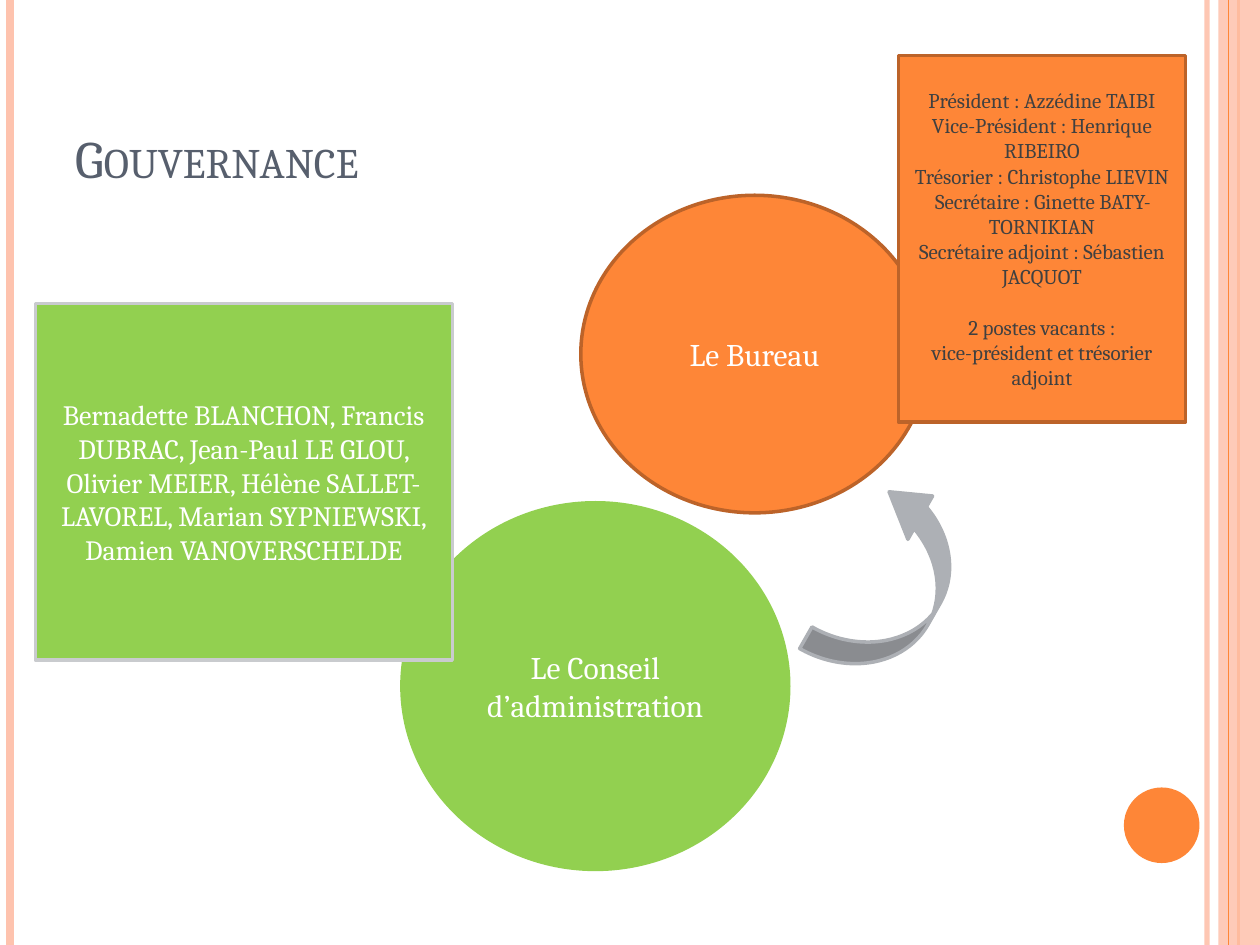
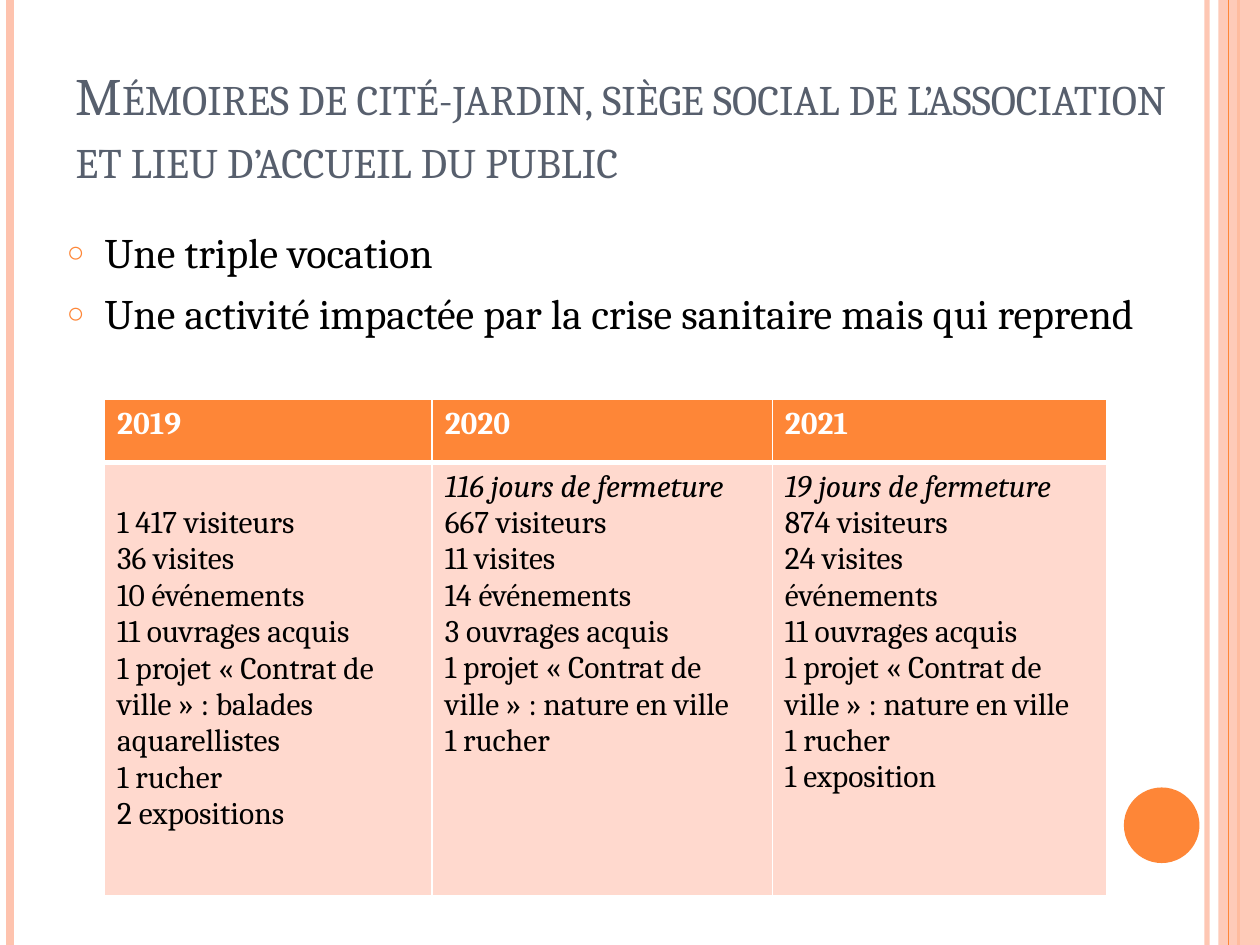
from lxml import etree
from pptx import Presentation
from pptx.dml.color import RGBColor
from pptx.enum.shapes import MSO_CONNECTOR, MSO_SHAPE
from pptx.enum.text import MSO_ANCHOR, MSO_AUTO_SIZE, PP_ALIGN
from pptx.oxml.ns import qn
from pptx.util import Inches, Pt

RECT, OVAL = MSO_SHAPE.RECTANGLE, MSO_SHAPE.OVAL
CURVED_ARROW = MSO_SHAPE.CURVED_DOWN_ARROW
STRAIGHT = MSO_CONNECTOR.STRAIGHT
CENTER, LEFT = PP_ALIGN.CENTER, PP_ALIGN.LEFT
MIDDLE, TOP, BOTTOM = MSO_ANCHOR.MIDDLE, MSO_ANCHOR.TOP, MSO_ANCHOR.BOTTOM
NO_FIT = MSO_AUTO_SIZE.NONE

FONT = "Cambria"
COLORS = {
    "orange": "FE8637", "dark_orange": "BC6329", "peach": "FEC3AE",
    "pale": "FFD9CE", "green": "92D050", "gray": "ADB0B5",
    "light_gray": "C9CBCE", "slate": "575F6D", "ink": "404040",
    "white": "FFFFFF", "black": "000000",
}


def rgb(name):
    return RGBColor.from_string(COLORS[name])


def set_alpha(element, percent):
    """Make the first solid colour inside element partly transparent."""
    color = element.find(".//" + qn("a:srgbClr"))
    etree.SubElement(color, qn("a:alpha")).set("val", str(percent * 1000))


class Deck:
    def __init__(self):
        self.prs = Presentation()
        self.prs.slide_width, self.prs.slide_height = Inches(10), Inches(7.5)
        self.slide = None

    def new_slide(self, layout, title, title_width):
        self.slide = self.prs.slides.add_slide(self.prs.slide_layouts[layout])
        self.side_bands()
        sp = self.slide.shapes.title
        self.place(sp, 0.5, 0.3, title_width, 1.25)
        tf = sp.text_frame
        tf.text = title
        tf.auto_size = NO_FIT
        tf.vertical_anchor = BOTTOM
        p = tf.paragraphs[0]
        p.alignment = LEFT
        self.format(p, 30, "slate")
        p.runs[0].font._element.set("cap", "small")

    def side_bands(self):
        self.vertical_line(9.58, "peach", 3, alpha=93)
        self.vertical_line(0.08, "peach", 4.5)
        self.vertical_line(9.83, "orange", 1.5)
        band = self.shape(RECT, 9.67, 0, 0.33, 7.5, "peach")
        set_alpha(band._element.spPr, 87)
        self.vertical_line(9.75, "orange", 0.75)
        self.shape(OVAL, 8.92, 6.25, 0.6, 0.6, "orange")

    def place(self, sp, left, top, width, height):
        sp.left, sp.top = Inches(left), Inches(top)
        sp.width, sp.height = Inches(width), Inches(height)

    def format(self, p, size, color, bold=False, italic=False):
        for r in p.runs:
            font = r.font
            font.name, font.size = FONT, Pt(size)
            font.bold, font.italic = bold, italic
            font.color.rgb = rgb(color)

    def vertical_line(self, x, color, width, alpha=None):
        line = self.slide.shapes.add_connector(
            STRAIGHT, Inches(x), 0, Inches(x), self.prs.slide_height)
        line.line.color.rgb = rgb(color)
        line.line.width = Pt(width)
        sp_pr = line._element.spPr
        etree.SubElement(sp_pr, qn("a:effectLst"))
        if alpha:
            set_alpha(sp_pr, alpha)

    def shape(self, kind, left, top, width, height, fill, outline=None):
        sp = self.slide.shapes.add_shape(
            kind, Inches(left), Inches(top), Inches(width), Inches(height))
        sp.shadow.inherit = False
        sp.fill.solid()
        sp.fill.fore_color.rgb = rgb(fill)
        if outline:
            sp.line.color.rgb = rgb(outline)
            sp.line.width = Pt(2)
        else:
            sp.line.fill.background()
        return sp

    def label(self, sp, text, size, color="white"):
        tf = sp.text_frame
        tf.text = text
        tf.word_wrap = True
        tf.vertical_anchor = MIDDLE
        for p in tf.paragraphs:
            p.alignment = CENTER
            self.format(p, size, color)

    def bullets(self, items, left, top, width, height):
        sp = self.slide.placeholders[1]
        self.place(sp, left, top, width, height)
        tf = sp.text_frame
        tf.text = "\n".join(items)
        tf.auto_size = NO_FIT
        tf.vertical_anchor = TOP
        for i, p in enumerate(tf.paragraphs):
            p.space_before = Pt(6 if i else 0)
            p_pr = p._p.get_or_add_pPr()
            p_pr.set("marL", str(Inches(0.3)))
            p_pr.set("indent", str(-Inches(0.3)))
            bullet_color = etree.SubElement(p_pr, qn("a:buClr"))
            etree.SubElement(bullet_color, qn("a:srgbClr")).set("val", COLORS["orange"])
            etree.SubElement(p_pr, qn("a:buSzPct")).set("val", "70000")
            etree.SubElement(p_pr, qn("a:buChar")).set("char", "○")
            self.format(p, 24, "black")

    def cell(self, cell, text, fill, color, bold=False, borders=(1, 1, 1, 1)):
        """Fill a cell; borders are left, right, top and bottom in points."""
        cell.text = text
        for p in cell.text_frame.paragraphs:
            self.format(p, 18, color, bold, italic=p.text.endswith("fermeture"))
        cell.fill.solid()
        cell.fill.fore_color.rgb = rgb(fill)
        tc_pr = cell._tc.get_or_add_tcPr()
        for i, (side, width) in enumerate(zip("LRTB", borders)):
            ln = etree.Element(qn("a:ln" + side), w=str(Pt(width)))
            solid = etree.SubElement(ln, qn("a:solidFill"))
            etree.SubElement(solid, qn("a:srgbClr")).set("val", COLORS["white"])
            tc_pr.insert(i, ln)

    def table(self, columns, left, top, widths, heights):
        table = self.slide.shapes.add_table(
            2, len(columns), Inches(left), Inches(top),
            Inches(sum(widths)), Inches(sum(heights))).table
        table.horz_banding = False
        for row, height in zip(table.rows, heights):
            row.height = Inches(height)
        for i, (year, lines) in enumerate(columns.items()):
            table.columns[i].width = Inches(widths[i])
            self.cell(table.cell(0, i), year, "orange", "white", True, (1, 1, 1, 3))
            self.cell(table.cell(1, i), "\n".join(lines), "pale", "black",
                      borders=(1, 1, 3, 1))
        return table


def governance(deck):
    deck.new_slide(5, "Gouvernance", 8.17)
    council = deck.shape(OVAL, 3.19, 3.99, 3.07, 2.91, "green", "green")
    deck.label(council, "Le Conseil d’administration", 18)
    board = deck.shape(OVAL, 4.61, 1.55, 2.76, 2.52, "orange", "dark_orange")
    deck.label(board, "Le Bureau", 18)

    officers = deck.shape(RECT, 7.13, 0.44, 2.28, 2.91, "orange", "dark_orange")
    deck.label(officers, "\n".join([
        "Président : Azzédine TAIBI",
        "Vice-Président : Henrique RIBEIRO",
        "Trésorier : Christophe LIEVIN",
        "Secrétaire : Ginette BATY-TORNIKIAN",
        "Secrétaire adjoint : Sébastien JACQUOT",
        "2 postes vacants :",
        "vice-président et trésorier adjoint",
    ]), 12, "ink")
    officers.text_frame.paragraphs[5].space_before = Pt(14.4)

    members = deck.shape(RECT, 0.28, 2.41, 3.31, 2.83, "green", "light_gray")
    deck.label(members, "Bernadette BLANCHON, Francis DUBRAC, Jean-Paul LE GLOU, "
               "Olivier MEIER, Hélène SALLET-LAVOREL, Marian SYPNIEWSKI, "
               "Damien VANOVERSCHELDE", 16)

    arrow = deck.shape(CURVED_ARROW, 6.28, 4.24, 1.63, 0.79, "gray", "gray")
    for i, value in enumerate((0.25, 0.5, 0.4)):
        arrow.adjustments[i] = value
    arrow.rotation = 119.7
    arrow._element.spPr.xfrm.set("flipH", "1")


def activity(deck):
    deck.new_slide(1, "Mémoires de cité-jardin, siège social de l’association "
                   "et lieu d’accueil du public", 9.07)
    deck.bullets(["Une triple vocation",
                  "Une activité impactée par la crise sanitaire mais qui reprend"],
                 0.43, 1.75, 8.82, 4.76)
    nature = "1 projet « Contrat de ville » : nature en ville"
    years = {
        "2019": ["1 417 visiteurs", "36 visites", "10 événements",
                 "11 ouvrages acquis",
                 "1 projet « Contrat de ville » : balades aquarellistes",
                 "1 rucher", "2 expositions"],
        "2020": ["116 jours de fermeture", "667 visiteurs", "11 visites",
                 "14 événements", "3 ouvrages acquis", nature, "1 rucher"],
        "2021": ["19 jours de fermeture", "874 visiteurs", "24 visites",
                 "événements", "11 ouvrages acquis", nature, "1 rucher",
                 "1 exposition"],
    }
    table = deck.table(years, 0.83, 3.17, (2.6, 2.7, 2.65), (0.5, 3.44))
    table.cell(1, 0).margin_top = Inches(0.34)


def main():
    deck = Deck()
    governance(deck)
    activity(deck)
    deck.prs.save("out.pptx")


if __name__ == "__main__":
    main()
